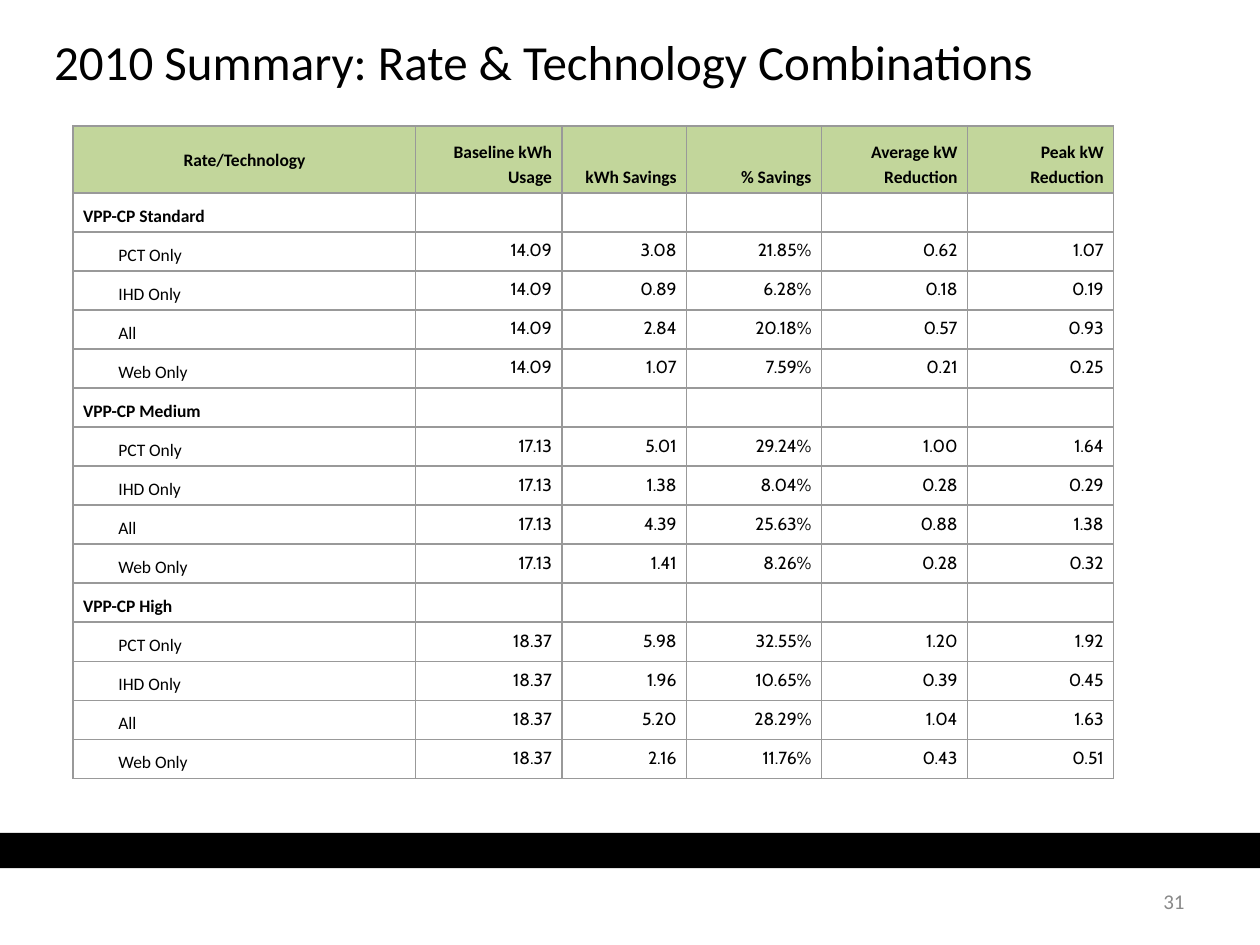
from dataclasses import dataclass

from pptx import Presentation
from pptx import util as u
from pptx.dml import color
from pptx.enum import shapes, text
from pptx.oxml import parse_xml
from pptx.oxml import ns

Inches = u.Inches
AL = text.PP_ALIGN
ANC = text.MSO_ANCHOR


@dataclass(frozen=True)
class Theme:
    ink: str = "000000"
    head: str = "C2D69B"
    grid: str = "999999"
    mute: str = "898989"
    face: str = "Calibri"
    digit: str = "Cabin"
    title: int = 28
    cell: int = 10
    page: int = 12


T = Theme()
HEADS = ["Rate/Technology", "Baseline kWh Usage", "kWh Savings",
         "% Savings", "Average kW Reduction", "Peak kW Reduction"]
TECHS = ["PCT Only", "IHD Only", "All", "Web Only"]
RATES = [
    ("VPP-CP Standard", "14.09", ["3.08 21.85% 0.62 1.07", "0.89 6.28% 0.18 0.19",
                                  "2.84 20.18% 0.57 0.93", "1.07 7.59% 0.21 0.25"]),
    ("VPP-CP Medium", "17.13", ["5.01 29.24% 1.00 1.64", "1.38 8.04% 0.28 0.29",
                                "4.39 25.63% 0.88 1.38", "1.41 8.26% 0.28 0.32"]),
    ("VPP-CP High", "18.37", ["5.98 32.55% 1.20 1.92", "1.96 10.65% 0.39 0.45",
                              "5.20 28.29% 1.04 1.63", "2.16 11.76% 0.43 0.51"]),
]
COLS = [2.72, 1.16, 0.99, 1.07, 1.16, 1.16]


def put(item, vals):
    for key, val in vals.items():
        setattr(item, key, val)


def paint(fill, tint):
    fill.solid()
    fill.fore_color.rgb = color.RGBColor.from_string(tint)


def place(item, box):
    put(item, dict(zip(("left", "top", "width", "height"), map(Inches, box))))


def pad(item, side, end):
    put(item, {"margin_left": Inches(side), "margin_right": Inches(side),
               "margin_top": Inches(end), "margin_bottom": Inches(end)})


def write(para, words, size, tint=T.ink, face=T.face, bold=False, align=AL.LEFT):
    para.alignment = align
    run = para.add_run()
    run.text = words
    put(run.font, {"size": u.Pt(size), "name": face, "bold": bold})
    run.font.color.rgb = color.RGBColor.from_string(tint)


def edge(cell):
    prop = cell._tc.get_or_add_tcPr()
    for side in "LRTB":
        prop.append(parse_xml(
            f'<a:ln{side} {ns.nsdecls("a")} w="{u.Pt(1)}"><a:solidFill>'
            f'<a:srgbClr val="{T.grid}"/></a:solidFill></a:ln{side}>'))


def style(cell, words, anchor, tint=None, inset=0, **form):
    edge(cell)
    pad(cell, 0.08, 0.04)
    cell.vertical_anchor = anchor
    if tint:
        paint(cell.fill, tint)
    else:
        cell.fill.background()
    para = cell.text_frame.paragraphs[0]
    para.line_spacing = 1.15
    if inset:
        prop = para._p.get_or_add_pPr()
        prop.set("marL", "0")
        prop.set("indent", str(Inches(inset)))
    if words:
        write(para, words, T.cell, **form)
    else:
        para._p.append(parse_xml(
            f'<a:endParaRPr {ns.nsdecls("a")} sz="{T.cell * 100}"/>'))


def title(slide, box):
    item = slide.shapes.title
    place(item, box)
    frame = item.text_frame
    pad(frame, 0, 0)
    put(frame, {"word_wrap": True, "vertical_anchor": ANC.MIDDLE,
                "auto_size": text.MSO_AUTO_SIZE.NONE})
    write(frame.paragraphs[0], "2010 Summary: Rate & Technology Combinations", T.title)


def table(slide, box):
    count = 1 + len(RATES) * (1 + len(TECHS))
    grid = slide.shapes.add_table(count, len(COLS), *map(Inches, box)).table
    put(grid, {"first_row": False, "horz_banding": False})
    for col, wide in zip(grid.columns, COLS):
        col.width = Inches(wide)
    top = 0.53
    for row in grid.rows:
        row.height = Inches((box[3] - top) / (count - 1))
    grid.rows[0].height = Inches(top)

    for col, words in enumerate(HEADS):
        first = col == 0
        style(grid.cell(0, col), words, ANC.MIDDLE if first else ANC.BOTTOM,
              tint=T.head, bold=True, align=AL.CENTER if first else AL.RIGHT)
    grid.cell(0, 0).text_frame.paragraphs[0].space_after = u.Pt(2)

    line = 1
    for rate, base, data in RATES:
        style(grid.cell(line, 0), rate, ANC.BOTTOM, bold=True)
        for col in range(1, len(COLS)):
            style(grid.cell(line, col), "", ANC.TOP)
        for tech, nums in zip(TECHS, data):
            line += 1
            style(grid.cell(line, 0), tech, ANC.BOTTOM, inset=0.28)
            for col, num in enumerate([base, *nums.split()], 1):
                style(grid.cell(line, col), num, ANC.TOP, face=T.digit, align=AL.RIGHT)
        line += 1


def band(slide, box):
    bar = slide.shapes.add_shape(shapes.MSO_SHAPE.RECTANGLE, *map(Inches, box))
    bar.shadow.inherit = False
    paint(bar.fill, T.ink)
    bar.line.fill.background()


def page(slide, box):
    frame = slide.shapes.add_textbox(*map(Inches, box)).text_frame
    pad(frame, 0.1, 0.05)
    put(frame, {"word_wrap": True, "vertical_anchor": ANC.MIDDLE})
    write(frame.paragraphs[0], "31", T.page, tint=T.mute, align=AL.RIGHT)


def main():
    deck = Presentation()
    put(deck, {"slide_width": Inches(10), "slide_height": Inches(7.5)})
    slide = deck.slides.add_slide(deck.slide_layouts[5])
    band(slide, (0, 6.61, 10, 0.28))
    page(slide, (7.17, 6.95, 2.33, 0.4))
    table(slide, (0.58, 1, 8.25, 5.18))
    title(slide, (0.43, 0.17, 8.24, 0.62))
    deck.save("out.pptx")


if __name__ == "__main__":
    main()
